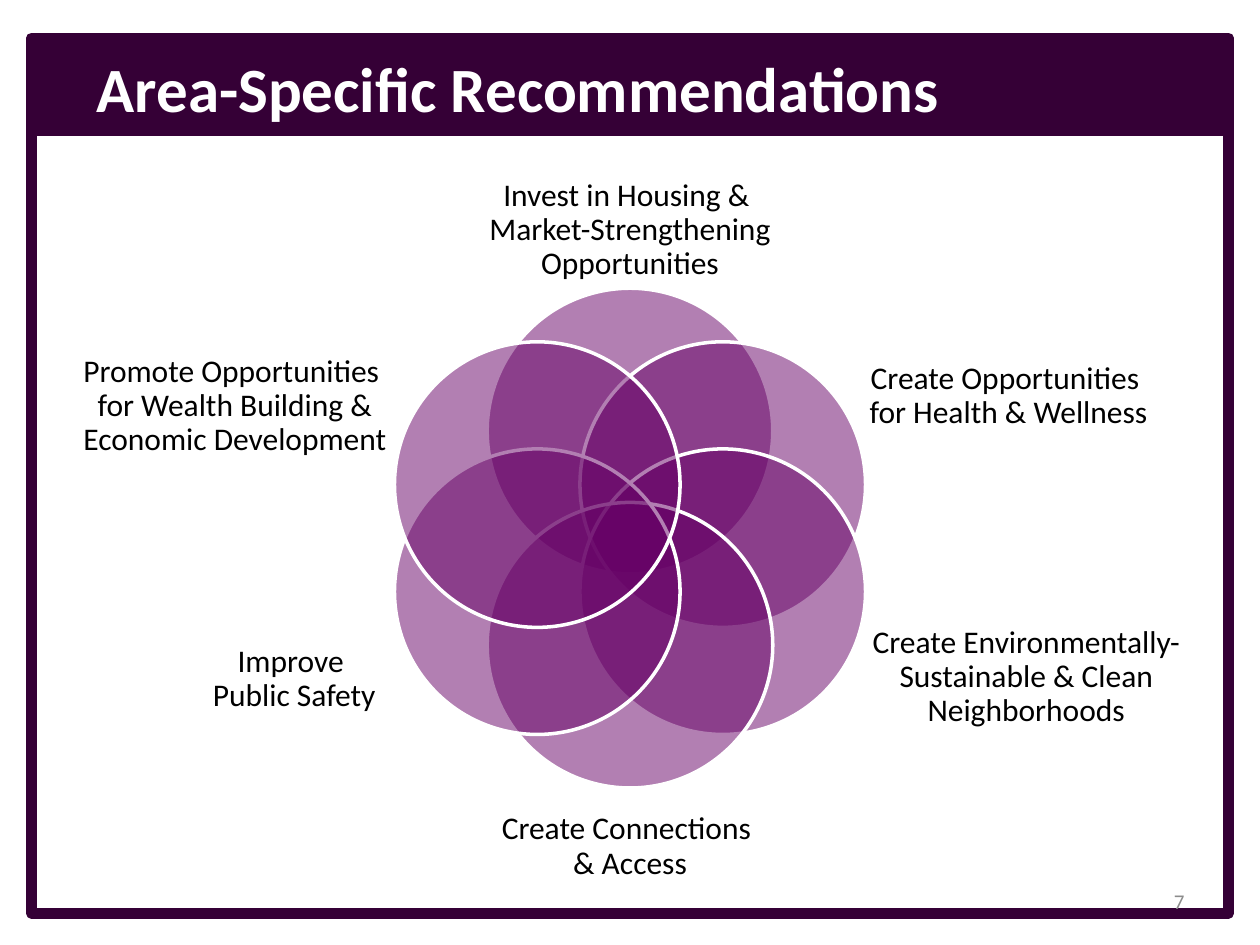
from math import cos, radians, sin

from pptx import Presentation
from pptx.dml.color import RGBColor
from pptx.enum.shapes import MSO_SHAPE
from pptx.enum.text import MSO_ANCHOR, MSO_AUTO_SIZE, PP_ALIGN
from pptx.oxml.ns import qn
from pptx.util import Pt
from lxml.etree import SubElement

PLUM = RGBColor(0x35, 0x00, 0x36)
PURPLE = RGBColor(0x66, 0x00, 0x66)
WHITE = RGBColor(0xFF, 0xFF, 0xFF)
BLACK = RGBColor(0, 0, 0)
GRAY = RGBColor(0x8C, 0x8C, 0x8C)


class Deck:
    font = "Calibri"

    def __init__(self, wide, high):
        self.prs = Presentation()
        self.prs.slide_width, self.prs.slide_height = Pt(wide), Pt(high)
        self.slide = self.prs.slides.add_slide(self.prs.slide_layouts[5])
        self.shapes = self.slide.shapes

    def shape(self, kind, box, fill=None, alpha=None, line=None, width=1):
        item = self.shapes.add_shape(kind, *map(Pt, box))
        item.shadow.inherit = False
        if fill is None:
            item.fill.background()
        else:
            item.fill.solid()
            item.fill.fore_color.rgb = fill
        if alpha is not None:
            color = item._element.spPr.find(qn("a:solidFill"))[0]
            SubElement(color, qn("a:alpha"), val=str(alpha * 1000))
        if line is None:
            item.line.fill.background()
        else:
            item.line.color.rgb = line
            item.line.width = Pt(width)

    def label(self, item, text, size, color, align, bold=False, pad=None, para=None):
        frame = item.text_frame
        style = {"word_wrap": True, "auto_size": MSO_AUTO_SIZE.NONE,
                 "vertical_anchor": MSO_ANCHOR.MIDDLE}
        if pad is not None:
            for side in ("left", "right", "top", "bottom"):
                style[f"margin_{side}"] = Pt(pad)
        for name, value in style.items():
            setattr(frame, name, value)
        line = frame.paragraphs[0]
        line.text = text
        for name, value in {"alignment": align, **(para or {})}.items():
            setattr(line, name, value)
        look = {"name": self.font, "size": Pt(size), "bold": bold}
        for run in line.runs:
            for name, value in look.items():
                setattr(run.font, name, value)
            run.font.color.rgb = color

    def title(self, text, box):
        item = self.shapes.title
        for name, value in zip(("left", "top", "width", "height"), box):
            setattr(item, name, Pt(value))
        self.label(item, text, 36, WHITE, PP_ALIGN.LEFT, bold=True)
        # Bring the title in front of the bar
        self.shapes._spTree.append(item._element)

    def text(self, text, box, *style, **more):
        self.label(self.shapes.add_textbox(*map(Pt, box)), text, *style, **more)


def main():
    deck = Deck(720, 540)

    # Header bar, title, frame and page number
    deck.shape(MSO_SHAPE.RECTANGLE, (18, 22.3, 684, 55.4), fill=PLUM)
    deck.title("Area-Specific Recommendations", (48, 21.6, 654, 57))
    deck.shape(MSO_SHAPE.RECTANGLE, (18, 21.6, 684, 500.4), line=PLUM, width=6)
    deck.text("7", (516, 500.5, 168, 28.75), 12, GRAY, PP_ALIGN.RIGHT)

    # Ring of circles, clockwise from the top, each with its label
    labels = [
        ("Invest in Housing & \vMarket-Strengthening Opportunities",
         (258, 76.3, 204, 111)),
        ("Create Opportunities \vfor Health & Wellness",
         (479.5, 165.6, 193.7, 121.7)),
        ("Create Environmentally-Sustainable & Clean Neighborhoods",
         (489.6, 319, 193.7, 136)),
        ("Create Connections \v& Access", (258, 428.4, 204, 111)),
        ("Improve \vPublic Safety", (71.3, 320.4, 193.7, 136)),
        ("Promote Opportunities \vfor Wealth Building & Economic Development",
         (37.4, 164.2, 193.7, 136)),
    ]
    mid_x, mid_y, reach, size = 360, 307.5, 61.2, 163.2
    para = {"line_spacing": 0.9, "space_after": Pt(6.3)}
    for i, (label, box) in enumerate(labels):
        turn = radians(i * 360 / len(labels) - 90)
        left = mid_x + reach * cos(turn) - size / 2
        top = mid_y + reach * sin(turn) - size / 2
        deck.shape(MSO_SHAPE.OVAL, (left, top, size, size), fill=PURPLE,
                   alpha=50, line=WHITE, width=2)
        deck.text(label, box, 18, BLACK, PP_ALIGN.CENTER, pad=0, para=para)

    deck.prs.save("out.pptx")


if __name__ == "__main__":
    main()
